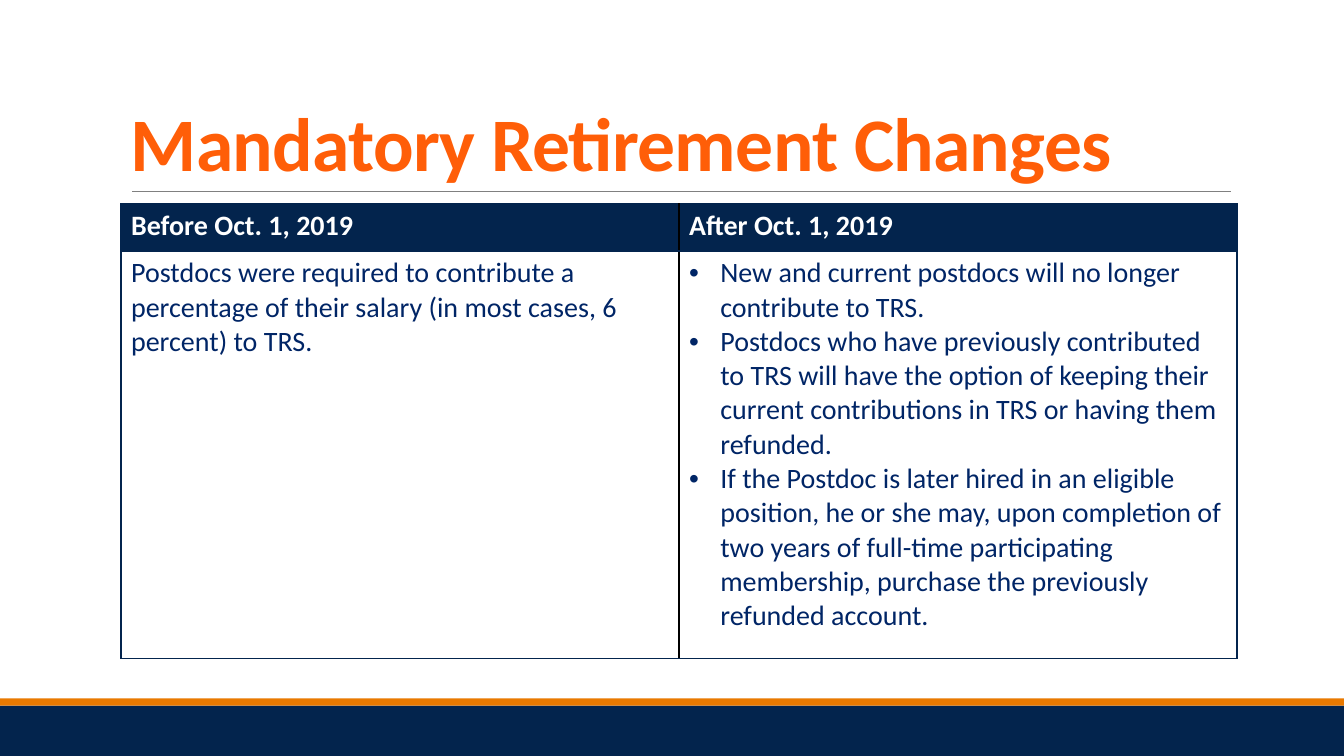
"""Build the slide on mandatory retirement changes."""
from lxml.etree import SubElement
from pptx import Presentation
from pptx.dml.color import RGBColor
from pptx.enum.shapes import MSO_CONNECTOR, MSO_SHAPE
from pptx.enum.text import MSO_ANCHOR
from pptx.oxml import parse_xml
from pptx.oxml.ns import nsdecls, qn
from pptx.util import Inches, Pt

NAVY, ORANGE, TITLE = "03244D", "E97900", "FF5E08"
WHITE, BODY, BLACK, GREY = "FFFFFF", "002566", "000000", "808080"


def rgb(color):
    return RGBColor.from_string(color)


def add_run(p, text, size, color, bold):
    r = p.add_run()
    r.text = text
    r.font.name = "Calibri"
    r.font.size = Pt(size)
    r.font.bold = bold
    r.font.color.rgb = rgb(color)
    return r


prs = Presentation()
prs.slide_width, prs.slide_height = Inches(13.33), Inches(7.5)
s = prs.slides.add_slide(prs.slide_layouts[6])

for top, height, color in [(7, 0.5, NAVY), (6.93, 0.07, ORANGE)]:
    sp = s.shapes.add_shape(MSO_SHAPE.RECTANGLE, 0, Inches(top), prs.slide_width, Inches(height))
    sp.shadow.inherit = False
    sp.fill.solid()
    sp.fill.fore_color.rgb = rgb(color)
    sp.line.fill.background()

rule = s.shapes.add_connector(
    MSO_CONNECTOR.STRAIGHT, Inches(1.31), Inches(1.9), Inches(12.21), Inches(1.9))
rule.line.color.rgb = rgb(GREY)
rule.line.width = Pt(0.5)
SubElement(rule._element.spPr, qn("a:effectLst"))

title = s.shapes.add_textbox(Inches(1.2), Inches(0.31), Inches(11), Inches(1.59))
tf = title.text_frame
tf.word_wrap = True
tf.vertical_anchor = MSO_ANCHOR.BOTTOM
p = tf.paragraphs[0]
p.line_spacing = 0.85
r = add_run(p, "Mandatory Retirement Changes", 54, TITLE, True)
r.font._element.set("spc", "-50")

rows = [
    [["Before Oct. 1, 2019"], ["After Oct. 1, 2019"]],
    [
        ["Postdocs were required to contribute a percentage of their salary "
         "(in most cases, 6 percent) to TRS."],
        ["New and current postdocs will no longer contribute to TRS.",
         "Postdocs who have previously contributed to TRS will have the option of "
         "keeping their current contributions in TRS or having them refunded.",
         "If the Postdoc is later hired in an eligible position, he or she may, upon "
         "completion of two years of full-time participating membership, purchase "
         "the previously refunded account."],
    ],
]
table = s.shapes.add_table(
    2, 2, Inches(1.2), Inches(2.02), Inches(11.07), Inches(4.51)).table
for column in table.columns:
    column.width = Inches(5.535)
for row, height in zip(table.rows, (0.47, 4.04)):
    row.height = Inches(height)

for i, row in enumerate(rows):
    header = i == 0
    for j, paragraphs in enumerate(row):
        cell = table.cell(i, j)
        cell.fill.solid()
        cell.fill.fore_color.rgb = rgb(NAVY if header else WHITE)
        for k, text in enumerate(paragraphs):
            tf = cell.text_frame
            p = tf.paragraphs[0] if k == 0 else tf.add_paragraph()
            add_run(p, text, 20, WHITE if header else BODY, header)
            if len(paragraphs) > 1:
                pPr = p._p.get_or_add_pPr()
                pPr.set("marL", str(Inches(0.31)))
                pPr.set("indent", str(-Inches(0.31)))
                SubElement(pPr, qn("a:buFont"), typeface="Arial")
                SubElement(pPr, qn("a:buChar"), char="•")
        borders = [("lnL", BLACK if j else NAVY), ("lnR", NAVY if j else BLACK),
                   ("lnT", NAVY), ("lnB", NAVY)]
        for position, (side, color) in enumerate(borders):
            cell._tc.get_or_add_tcPr().insert(position, parse_xml(
                f'<a:{side} {nsdecls("a")} w="{Pt(1)}"><a:solidFill>'
                f'<a:srgbClr val="{color}"/></a:solidFill></a:{side}>'))

prs.save("out.pptx")
